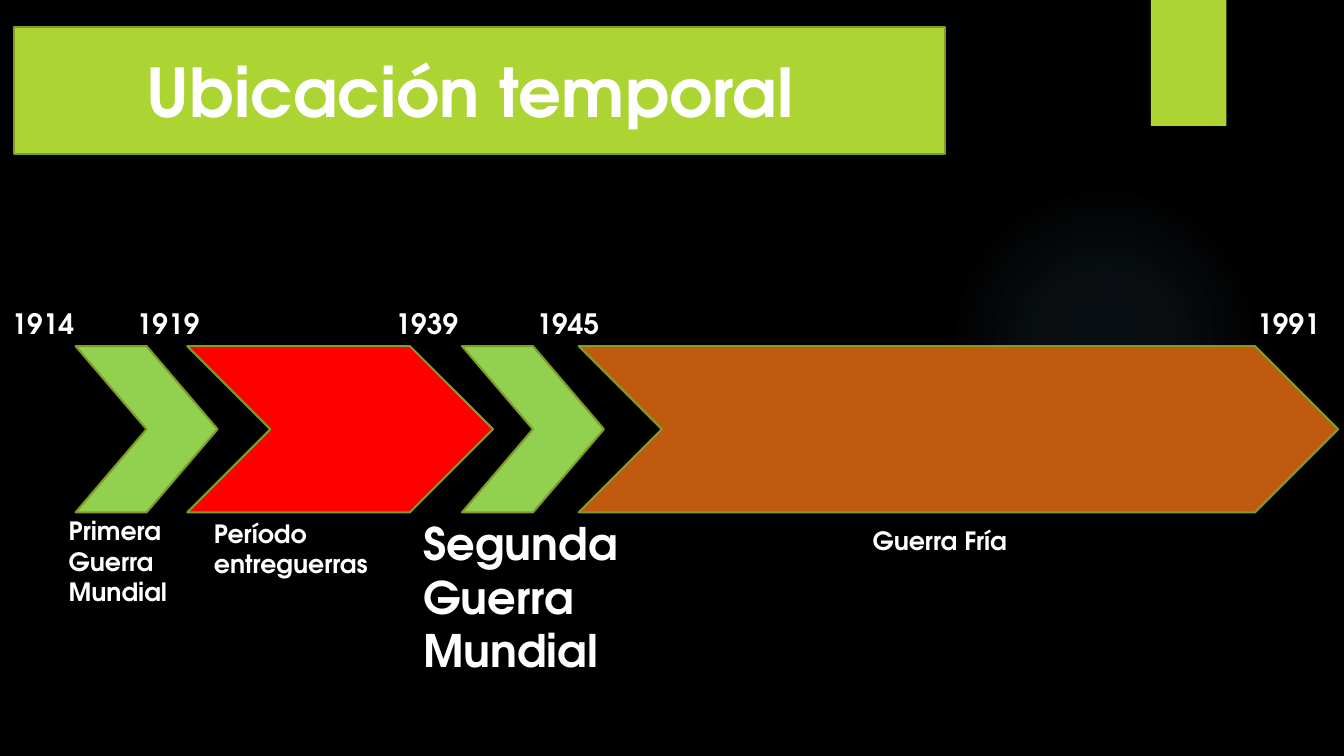
from dataclasses import dataclass

from lxml.etree import SubElement
from pptx import Presentation
from pptx.dml.color import RGBColor
from pptx.enum.shapes import MSO_SHAPE
from pptx.enum.text import MSO_ANCHOR, MSO_AUTO_SIZE, PP_ALIGN
from pptx.oxml import parse_xml
from pptx.oxml.ns import nsdecls, qn
from pptx.util import Inches, Pt


@dataclass(frozen=True)
class Theme:
    face: str = "TeX Gyre Adventor"
    back: str = "000000"
    ink: str = "FFFFFF"
    lime: str = "ACD433"
    edge: str = "7F9D26"
    war: str = "92D050"
    peace: str = "FF0000"
    cold: str = "C05A0E"
    glow: str = "7AC4F0"
    head: int = 48
    big: int = 32
    year: int = 20
    note: int = 18
    rule: float = 1.5


THEME = Theme()
COLS, ROWS = 160, 90
WIDE, HIGH = Inches(13.333), Inches(7.5)
BAND_TOP, BAND_HIGH = 41.2, 19.8

# left column, width, colour
ERAS = [
    (9, 16.9, THEME.war),
    (22.3, 36.4, THEME.peace),
    (55, 16.9, THEME.war),
    (68.9, 90.4, THEME.cold),
]
# left, top, width, height, size, lines
NOTES = [
    (7, 60.8, 15.4, 12.1, THEME.note, ["Primera", "Guerra Mundial"]),
    (24.3, 61.1, 23, 8.5, THEME.note, ["Período entreguerras"]),
    (49.2, 60.8, 26.6, 20.6, THEME.big, ["Segunda", "Guerra Mundial"]),
    (102.7, 61.9, 19.6, 4.8, THEME.note, ["Guerra Fría"]),
]
YEARS = ["1914", "1919", "1939", "1945", "1991"]
STOPS = [14.9, 45.7, 62.5, 148.3]


def col(n):
    return round(WIDE * n / COLS)


def row(n):
    return round(HIGH * n / ROWS)


def cell(left, top, width, height):
    """Turn grid units into lengths."""
    return col(left), row(top), col(width), row(height)


def paint(item, fill, edge=None):
    item.fill.solid()
    item.fill.fore_color.rgb = RGBColor.from_string(fill)
    if edge:
        item.line.color.rgb = RGBColor.from_string(edge)
        item.line.width = Pt(THEME.rule)
    else:
        item.line.fill.background()


def style(font, size):
    look = {"name": THEME.face, "size": Pt(size), "bold": True}
    for key, value in look.items():
        setattr(font, key, value)
    font.color.rgb = RGBColor.from_string(THEME.ink)


def add_form(shapes, kind, area, fill, edge=None):
    item = shapes.add_shape(kind, *cell(*area))
    item.shadow.inherit = False
    paint(item, fill, edge)
    return item


def add_glow(shapes):
    """Draw a round light that fades outwards."""
    item = add_form(shapes, MSO_SHAPE.OVAL, (112.9, 22, 37, 37), THEME.glow)
    stops = "".join(
        f'<a:gs pos="{pos}000"><a:srgbClr val="{THEME.glow}">'
        f'<a:alpha val="{alpha}000"/></a:srgbClr></a:gs>'
        for pos, alpha in [(0, 7), (36, 6), (69, 0)]
    )
    fade = parse_xml(
        f'<a:gradFill {nsdecls("a")}><a:gsLst>{stops}</a:gsLst>'
        '<a:path path="circle"><a:fillToRect l="50000" t="50000" '
        'r="50000" b="50000"/></a:path></a:gradFill>'
    )
    props = item.element.spPr
    props.replace(props.find(qn("a:solidFill")), fade)


def add_title(slide, text):
    title = slide.shapes.title
    area = cell(1.7, 3.2, 110.8, 15.1)
    for key, value in zip(("left", "top", "width", "height"), area):
        setattr(title, key, value)
    paint(title, THEME.lime, THEME.edge)
    frame = title.text_frame
    frame.text = text
    frame.vertical_anchor = MSO_ANCHOR.MIDDLE
    frame.paragraphs[0].alignment = PP_ALIGN.CENTER
    style(frame.paragraphs[0].font, THEME.head)


def add_text(shapes, area, size, lines, stops=()):
    frame = shapes.add_textbox(*cell(*area)).text_frame
    frame.word_wrap = True
    frame.auto_size = MSO_AUTO_SIZE.SHAPE_TO_FIT_TEXT
    frame.text = "\n".join(lines)
    for para in frame.paragraphs:
        if stops:
            tabs = SubElement(para._p.get_or_add_pPr(), qn("a:tabLst"))
            for stop in stops:
                SubElement(tabs, qn("a:tab"), pos=str(col(stop)), algn="l")
        style(para.font, size)


def main():
    deck = Presentation()
    deck.slide_width, deck.slide_height = WIDE, HIGH
    slide = deck.slides.add_slide(deck.slide_layouts[5])
    back = slide.background.fill
    back.solid()
    back.fore_color.rgb = RGBColor.from_string(THEME.back)

    shapes = slide.shapes
    add_glow(shapes)
    add_form(shapes, MSO_SHAPE.RECTANGLE, (137, 0, 9, 15), THEME.lime)
    add_title(slide, "Ubicación temporal ")
    band = shapes.add_group_shape().shapes
    for left, width, fill in ERAS:
        area = (left, BAND_TOP, width, BAND_HIGH)
        add_form(band, MSO_SHAPE.CHEVRON, area, fill, THEME.edge)
    for *area, size, lines in NOTES:
        add_text(shapes, area, size, lines)
    add_text(shapes, (0.2, 35.9, 159.2, 5.3), THEME.year, ["\t".join(YEARS)], STOPS)
    deck.save("out.pptx")


if __name__ == "__main__":
    main()
